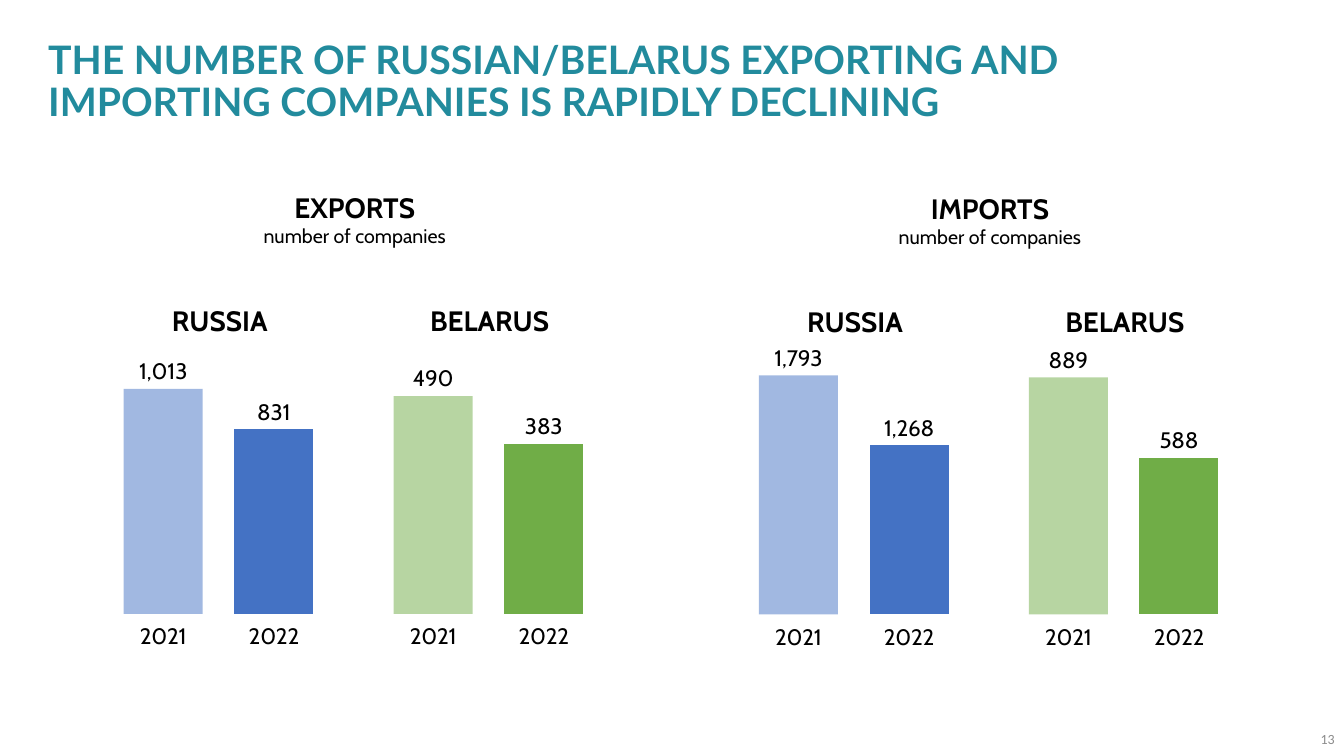
from dataclasses import dataclass
from typing import Any

from lxml import etree
from pptx import Presentation
from pptx.chart.data import CategoryChartData
from pptx.dml.color import RGBColor
from pptx.enum.chart import XL_CHART_TYPE, XL_LABEL_POSITION, XL_TICK_MARK
from pptx.enum.text import MSO_ANCHOR, MSO_AUTO_SIZE, PP_ALIGN
from pptx.oxml import parse_xml
from pptx.oxml.ns import nsdecls, qn
from pptx.util import Pt

COLUMN = XL_CHART_TYPE.COLUMN_CLUSTERED
ABOVE = XL_LABEL_POSITION.OUTSIDE_END
TICK = XL_TICK_MARK.OUTSIDE
TOP, MIDDLE = MSO_ANCHOR.TOP, MSO_ANCHOR.MIDDLE
LEFT, CENTER, RIGHT = PP_ALIGN.LEFT, PP_ALIGN.CENTER, PP_ALIGN.RIGHT
FIXED = MSO_AUTO_SIZE.NONE


@dataclass(frozen=True)
class Theme:
    teal: str = "228B9D"
    black: str = "000000"
    gray: str = "8C8C8C"
    blue: str = "4472C4"
    green: str = "70AD47"
    title: float = 28
    head: float = 20
    label: float = 16
    note: float = 14
    page: float = 10
    face: str = "Cabin"


@dataclass(frozen=True)
class Box:
    left: float
    top: float
    width: float
    height: float

    def place(self) -> tuple[Pt, Pt, Pt, Pt]:
        return Pt(self.left), Pt(self.top), Pt(self.width), Pt(self.height)


@dataclass(frozen=True)
class Line:
    text: str
    size: float
    color: str
    bold: bool = False
    face: str = "Cabin"


@dataclass(frozen=True)
class Country:
    name: str
    color: str
    counts: tuple[int, int]
    limit: int


@dataclass(frozen=True)
class Panel:
    name: str
    left: float
    top: float
    lands: tuple[Country, Country]


THEME = Theme()
YEARS = ("2021", "2022")
WIDE, STEP = 170, 192.75
PLOT = {"x": 0.03, "y": 0.03, "w": 0.93, "h": 0.84}
PANELS = (
    Panel("EXPORTS", 72, 132.5, (
        Country("RUSSIA", THEME.blue, (1013, 831), 1200),
        Country("BELARUS", THEME.green, (490, 383), 600))),
    Panel("IMPORTS", 525.75, 133, (
        Country("RUSSIA", THEME.blue, (1793, 1268), 2000),
        Country("BELARUS", THEME.green, (889, 588), 1000))),
)


def apply(target: Any, style: dict[str, Any]) -> None:
    for key, value in style.items():
        setattr(target, key, value)


def style_font(font: Any, size: float, color: str, bold: bool = False,
               face: str = THEME.face) -> None:
    apply(font, {"name": face, "size": Pt(size), "bold": bold})
    font.color.rgb = RGBColor.from_string(color)


def fill_text(shape: Any, lines: list[Line], align: Any, anchor: Any = TOP,
              space: float = 1.0) -> None:
    frame = shape.text_frame
    apply(frame, {"word_wrap": True, "auto_size": FIXED,
                  "vertical_anchor": anchor})
    for i, line in enumerate(lines):
        para = frame.add_paragraph() if i else frame.paragraphs[0]
        apply(para, {"alignment": align, "line_spacing": space})
        run = para.add_run()
        run.text = line.text
        style_font(run.font, line.size, line.color, line.bold, line.face)


def add_text(slide: Any, box: Box, lines: list[Line], align: Any = CENTER,
             anchor: Any = TOP) -> None:
    fill_text(slide.shapes.add_textbox(*box.place()), lines, align, anchor)


def fix_plot(chart: Any) -> None:
    area = chart.plots[0]._element.getparent()
    for old in area.findall(qn("c:layout")):
        area.remove(old)
    parts = "".join(f'<c:{key} val="{val}"/>' for key, val in PLOT.items())
    area.insert(0, parse_xml(
        f'<c:layout {nsdecls("c")}><c:manualLayout>'
        '<c:layoutTarget val="inner"/><c:xMode val="edge"/>'
        f'<c:yMode val="edge"/>{parts}</c:manualLayout></c:layout>'))


def add_bars(slide: Any, box: Box, land: Country) -> None:
    data = CategoryChartData()
    data.categories = YEARS
    data.add_series(land.name, land.counts)
    chart = slide.shapes.add_chart(COLUMN, *box.place(), data).chart
    apply(chart, {"has_legend": False, "has_title": False})
    style_font(chart.font, THEME.label, THEME.black)
    apply(chart.value_axis, {
        "minimum_scale": 0, "maximum_scale": land.limit,
        "has_major_gridlines": False, "visible": False})
    axis = chart.category_axis
    axis.major_tick_mark = TICK
    axis.format.line.fill.background()
    style_font(axis.tick_labels.font, THEME.label, THEME.black)
    plot = chart.plots[0]
    apply(plot, {"gap_width": 40, "vary_by_categories": False,
                 "has_data_labels": True})
    labels = plot.data_labels
    apply(labels, {"show_value": True, "position": ABOVE,
                   "number_format": "#,##0", "number_format_is_linked": False})
    style_font(labels.font, THEME.label, THEME.black)
    series = plot.series[0]
    pale = series.points[0].format.fill
    for fill in (series.format.fill, pale):
        fill.solid()
        fill.fore_color.rgb = RGBColor.from_string(land.color)
    tint = series._element.find(qn("c:dPt")).find(".//" + qn("a:srgbClr"))
    etree.SubElement(tint, qn("a:alpha")).set("val", "50000")
    fix_plot(chart)


def add_panel(slide: Any, panel: Panel) -> None:
    add_text(slide, Box(panel.left + STEP / 2, panel.top, WIDE, 48), [
        Line(panel.name, THEME.head, THEME.black, True),
        Line("number of companies", THEME.note, THEME.black)])
    for i, land in enumerate(panel.lands):
        left = panel.left + i * STEP
        add_bars(slide, Box(left, panel.top + 108.75, WIDE, 226.75), land)
        add_text(slide, Box(left, panel.top + 80.75, WIDE, 28),
                 [Line(land.name, THEME.head, THEME.black, True)])


def main() -> None:
    deck = Presentation()
    apply(deck, {"slide_width": Pt(960), "slide_height": Pt(540)})
    slide = deck.slides.add_slide(deck.slide_layouts[5])
    title = slide.shapes.title
    spot = Box(27.25, 25.25, 881.25, 68.5).place()
    apply(title, dict(zip(("left", "top", "width", "height"), spot)))
    fill_text(title, [Line(
        "THE NUMBER OF RUSSIAN/BELARUS EXPORTING AND IMPORTING COMPANIES "
        "IS RAPIDLY DECLINING", THEME.title, THEME.teal, True, "Lato")],
        LEFT, space=0.9)
    for panel in PANELS:
        add_panel(slide, panel)
    add_text(slide, Box(893.5, 515.5, 67, 24),
             [Line("13", THEME.page, THEME.gray, face="Calibri")],
             RIGHT, MIDDLE)
    deck.save("out.pptx")


if __name__ == "__main__":
    main()
